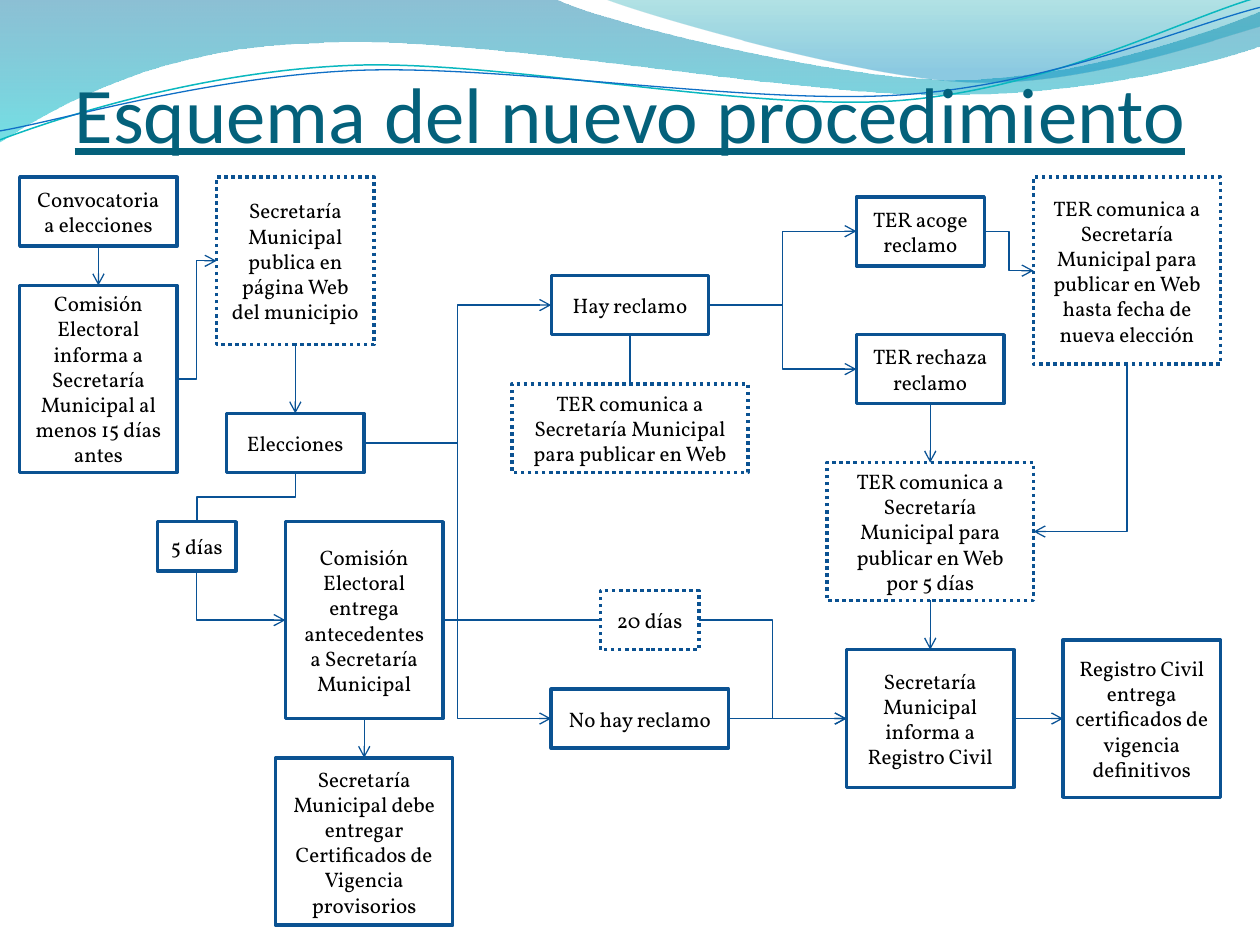
from dataclasses import dataclass

from lxml import etree
from pptx import Presentation
from pptx import util as u
from pptx.dml.color import RGBColor
from pptx.enum import dml, shapes, text
from pptx.oxml.ns import qn


@dataclass(frozen=True)
class Theme:
    title_font: str = "Calibri"
    body_font: str = "Vollkorn"
    title_size: u.Pt = u.Pt(45)
    body_size: u.Pt = u.Pt(12)
    title: RGBColor = RGBColor.from_string("04617B")
    body: RGBColor = RGBColor.from_string("000000")
    box_line: RGBColor = RGBColor.from_string("0B5292")
    connector: RGBColor = RGBColor.from_string("095295")


theme = Theme()
presentation = Presentation()
presentation.slide_width, presentation.slide_height = u.Cm(25.4), u.Cm(19.05)
slide = presentation.slides.add_slide(presentation.slide_layouts[6])


def add_curve(start, segments, closed):
    """Draw an outline in cm; one-point segments are lines, three-point ones Béziers."""
    builder = slide.shapes.build_freeform(u.Cm(start[0]), u.Cm(start[1]))
    points = [(u.Cm(x), u.Cm(y)) for segment in segments for x, y in segment]
    builder.add_line_segments(points, close=closed)
    shape = builder.convert_to_shape()
    shape.shadow.inherit = False
    lines = iter(list(shape._element.iter(qn("a:lnTo"))))
    for segment in segments:
        steps = [next(lines) for _ in segment]
        if len(steps) == 3:
            bezier = etree.Element(qn("a:cubicBezTo"))
            steps[0].addprevious(bezier)
            for step in steps:
                bezier.append(step[0])
                step.getparent().remove(step)
    return shape


# Header waves: start, segments, gradient stops (position, colour, opacity %)
waves = [
    ((0, 0),
     [[(11.18, -0.03)],
      [(12.09, 0.43), (16.87, 1.6), (19.25, 1.6)],
      [(21.67, 1.6), (24.33, 0.66), (25.4, 0.23)],
      [(25.43, 0.91)],
      [(24.97, 1.12), (22.1, 1.93), (18.95, 1.91)],
      [(15.8, 1.91), (9.7, 0.71), (6.53, 0.86)],
      [(3.25, 0.91), (1.17, 2.11), (-0.03, 2.87)]],
     [(0, "0074A1", 45), (1, "00C6CF", 55)]),
    ((12.17, -0.03),
     [[(12.93, 0.28), (17.32, 1.57), (19.53, 1.65)],
      [(21.74, 1.75), (24.41, 0.81), (25.4, 0.53)],
      [(25.4, 0)]],
     [(0, "00A1A9", 30), (0.8, "008BBF", 45)]),
]
for start, segments, stops in waves:
    wave = add_curve(start, segments, closed=True)
    wave.line.fill.background()
    wave.fill.gradient()
    wave.fill.gradient_angle = 270
    for stop, (position, color, _) in zip(wave.fill.gradient_stops, stops):
        stop.position = position
        stop.color.rgb = RGBColor.from_string(color)
    for color, (_, _, opacity) in zip(wave._element.iter(qn("a:srgbClr")), stops):
        etree.SubElement(color, qn("a:alpha"), val=str(opacity * 1000))

# Header strands: start, segments, colour, width
strands = [
    ((0, 2.82),
     [[(1.22, 2.36), (4.01, 1.45), (7.04, 1.32)],
      [(10.03, 1.19), (15.06, 2.26), (18.11, 2.03)],
      [(21.16, 1.8), (23.83, 0.38), (25.35, -0.05)]], "0AB8BF", 0.85),
    ((0, 2.64),
     [[(1.19, 2.44), (4.17, 1.55), (7.19, 1.42)],
      [(10.24, 1.3), (15.16, 2.13), (18.21, 1.91)],
      [(21.23, 1.7), (23.9, 0.53), (25.4, 0.15)]], "0F6FC6", 0.75),
]
for start, segments, color, width in strands:
    strand = add_curve(start, segments, closed=False)
    strand.fill.background()
    strand.line.color.rgb = RGBColor.from_string(color)
    strand.line.width = u.Pt(width)


def write(frame, content, font_name, size, color):
    """Put centred text in a frame, anchored in the middle."""
    frame.word_wrap = True
    frame.vertical_anchor = text.MSO_ANCHOR.MIDDLE
    frame.text = content
    paragraph = frame.paragraphs[0]
    paragraph.alignment = text.PP_ALIGN.CENTER
    font = paragraph.runs[0].font
    font.name, font.size, font.color.rgb = font_name, size, color
    return font


title = slide.shapes.add_textbox(u.Cm(1.27), u.Cm(0.91), u.Cm(22.86), u.Cm(2.59))
title_frame = title.text_frame
title_frame.margin_left = title_frame.margin_right = title_frame.margin_bottom = 0
title_font = write(title_frame, "Esquema del nuevo procedimiento",
                   theme.title_font, theme.title_size, theme.title)
title_font.underline = True

# Boxes sit on a grid of 128 units across: left, top, width, height, dotted, text
UNIT = u.Cm(25.4) / 128
boxes = {
    "informa": (86, 66, 17, 14, False, "Secretaría Municipal informa a Registro Civil"),
    "registro": (108, 65, 16, 16, False,
                 "Registro Civil entrega certificados de vigencia definitivos"),
    "convocatoria": (2, 18, 16, 7, False, "Convocatoria a elecciones"),
    "rechaza": (87, 34, 15, 7, False, "TER rechaza reclamo"),
    "acoge": (87, 20, 13, 7, False, "TER acoge reclamo"),
    "sin reclamo": (56, 70, 18, 6, False, "No hay reclamo"),
    "comisión": (2, 29, 16, 19, False,
                 "Comisión Electoral informa a Secretaría Municipal al menos 15 días antes"),
    "elecciones": (23, 42, 14, 6, False, "Elecciones"),
    "reclamo": (56, 28, 16, 6, False, "Hay reclamo"),
    "provisorios": (28, 77, 18, 17, False,
                    "Secretaría Municipal debe entregar Certificados de Vigencia provisorios"),
    "antecedentes": (29, 53, 16, 20, False,
                     "Comisión Electoral entrega antecedentes a Secretaría Municipal"),
    "5 días": (16, 53, 8, 5, False, "5 días"),
    "20 días": (61, 60, 10, 6, True, "20 días"),
    "aviso": (52, 39, 24, 9, True, "TER comunica a Secretaría Municipal para publicar en Web"),
    "web": (22, 18, 16, 17, True, "Secretaría Municipal publica en página Web del municipio"),
    "nueva elección": (105, 18, 19, 19, True,
                       "TER comunica a Secretaría Municipal para publicar en Web "
                       "hasta fecha de nueva elección"),
    "por 5 días": (84, 47, 21, 14, True,
                   "TER comunica a Secretaría Municipal para publicar en Web por 5 días"),
}
drawn = {}
for name, (*place, dotted, content) in boxes.items():
    box = slide.shapes.add_shape(shapes.MSO_SHAPE.RECTANGLE,
                                 *(round(value * UNIT) for value in place))
    box.shadow.inherit = False
    box.fill.background()
    box.line.color.rgb = theme.box_line
    box.line.width = u.Pt(2)
    if dotted:
        box.line.dash_style = dml.MSO_LINE.ROUND_DOT
    write(box.text_frame, content, theme.body_font, theme.body_size, theme.body)
    drawn[name] = box

# Connection sites of a rectangle
TOP, LEFT, BOTTOM, RIGHT = range(4)
STRAIGHT, ELBOW, CORNER = "line", "bentConnector3", "bentConnector2"
links = [
    ("convocatoria", BOTTOM, "comisión", TOP, STRAIGHT, True),
    ("web", BOTTOM, "elecciones", TOP, STRAIGHT, True),
    ("5 días", BOTTOM, "antecedentes", LEFT, CORNER, True),
    ("comisión", RIGHT, "web", LEFT, ELBOW, True),
    ("elecciones", BOTTOM, "5 días", TOP, ELBOW, False),
    ("antecedentes", BOTTOM, "provisorios", TOP, STRAIGHT, True),
    ("elecciones", RIGHT, "reclamo", LEFT, ELBOW, True),
    ("elecciones", RIGHT, "sin reclamo", LEFT, ELBOW, True),
    ("reclamo", BOTTOM, "aviso", TOP, STRAIGHT, False),
    ("reclamo", RIGHT, "acoge", LEFT, ELBOW, True),
    ("reclamo", RIGHT, "rechaza", LEFT, ELBOW, True),
    ("rechaza", BOTTOM, "por 5 días", TOP, STRAIGHT, True),
    ("por 5 días", BOTTOM, "informa", TOP, STRAIGHT, True),
    ("sin reclamo", RIGHT, "informa", LEFT, STRAIGHT, True),
    ("acoge", RIGHT, "nueva elección", LEFT, ELBOW, True),
    ("informa", RIGHT, "registro", LEFT, STRAIGHT, True),
    ("antecedentes", RIGHT, "20 días", LEFT, STRAIGHT, False),
    ("20 días", RIGHT, "informa", LEFT, ELBOW, True),
    ("nueva elección", BOTTOM, "por 5 días", RIGHT, CORNER, True),
]
for source, source_site, target, target_site, kind, arrow in links:
    connector_type = (shapes.MSO_CONNECTOR.STRAIGHT if kind == STRAIGHT
                      else shapes.MSO_CONNECTOR.ELBOW)
    connector = slide.shapes.add_connector(connector_type, 0, 0, 0, 0)
    connector.begin_connect(drawn[source], source_site)
    connector.end_connect(drawn[target], target_site)
    properties = connector._element.spPr
    properties.find(qn("a:prstGeom")).set("prst", kind)
    if kind != STRAIGHT and source_site == BOTTOM:
        # A bend that starts downwards is the sideways one turned by 90 degrees
        across = connector.end_x - connector.begin_x
        down = connector.end_y - connector.begin_y
        middle_x = (connector.begin_x + connector.end_x) // 2
        middle_y = (connector.begin_y + connector.end_y) // 2
        connector.left, connector.top = middle_x - down // 2, middle_y - abs(across) // 2
        connector.width, connector.height = down, abs(across)
        transform = properties.find(qn("a:xfrm"))
        transform.set("rot", str(90 * 60000))
        transform.set("flipH", "0")
        transform.set("flipV", str(int(across > 0)))
    connector.line.color.rgb = theme.connector
    connector.line.width = u.Pt(0.75)
    if arrow:
        etree.SubElement(properties.find(qn("a:ln")), qn("a:tailEnd"), type="arrow")
    etree.SubElement(properties, qn("a:effectLst"))

presentation.save("out.pptx")
